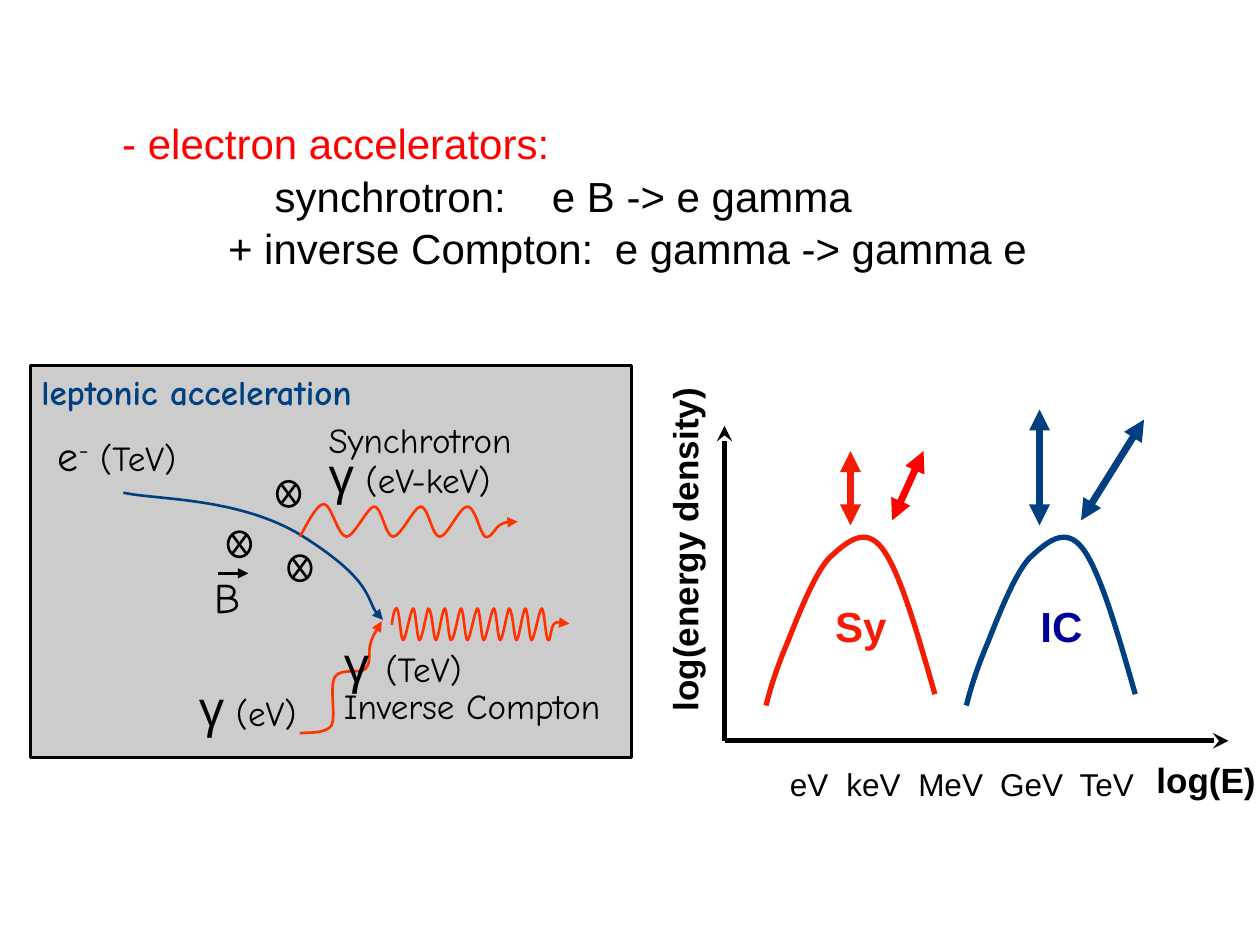
from dataclasses import dataclass
from typing import NamedTuple

from lxml import etree
from pptx import Presentation
from pptx.dml.color import RGBColor
from pptx.enum.shapes import MSO_CONNECTOR, MSO_SHAPE
from pptx.enum.text import MSO_ANCHOR, MSO_AUTO_SIZE, PP_ALIGN
from pptx.oxml.ns import qn
from pptx.util import Pt

PX = 9144  # 100 px to the inch
BLACK = RGBColor(0x00, 0x00, 0x00)
RED = RGBColor(0xFF, 0x00, 0x00)
FLAME = RGBColor(0xF4, 0x1C, 0x05)
ORANGE = RGBColor(0xFF, 0x33, 0x00)
BLUE = RGBColor(0x00, 0x40, 0x80)
NAVY = RGBColor(0x00, 0x00, 0x99)
ARIAL, COMIC = "Arial", "Comic Neue"
STRAIGHT = MSO_CONNECTOR.STRAIGHT
RECT, OVAL = MSO_SHAPE.RECTANGLE, MSO_SHAPE.OVAL
TOP, MIDDLE = MSO_ANCHOR.TOP, MSO_ANCHOR.MIDDLE
LEFT = PP_ALIGN.LEFT
GROW, FIXED = MSO_AUTO_SIZE.SHAPE_TO_FIT_TEXT, MSO_AUTO_SIZE.NONE


class Bit(NamedTuple):
    text: str
    size: int = 20
    raised: bool = False


@dataclass
class Label:
    box: tuple
    lines: list
    font: str = ARIAL
    color: RGBColor = BLACK
    bold: bool = False
    anchor: MSO_ANCHOR = TOP
    turn: int = 0
    gaps: tuple = ()
    tabs: tuple = ()


@dataclass
class Arrow:
    start: tuple
    end: tuple
    color: RGBColor = BLACK
    width: float = 1.5
    head: str = ""
    tail: str = ""


def write(para, text: str, *, size=20, font=ARIAL, color=BLACK, bold=False, raised=False):
    run = para.add_run()
    run.text = text
    run.font.size, run.font.name, run.font.bold = Pt(size), font, bold
    run.font.color.rgb = color
    if raised:
        run._r.get_or_add_rPr().set("baseline", "30000")


def set_tabs(para, stops: tuple):
    tabs = etree.SubElement(para._p.get_or_add_pPr(), qn("a:tabLst"))
    for stop in stops:
        etree.SubElement(tabs, qn("a:tab"), pos=str(stop * PX), algn="l")


def set_line(shape, color: RGBColor, width: float, head="", tail=""):
    shape.line.color.rgb = color
    shape.line.width = Pt(width)
    ln = shape._element.spPr.find(qn("a:ln"))
    for tag, kind in (("a:headEnd", head), ("a:tailEnd", tail)):
        if kind:
            etree.SubElement(ln, qn(tag), type=kind)


def add_label(shapes, label: Label):
    box = shapes.add_textbox(*(n * PX for n in label.box))
    box.rotation = label.turn
    frame = box.text_frame
    frame.word_wrap = bool(label.tabs)
    frame.auto_size, frame.vertical_anchor = GROW, label.anchor
    for i, bits in enumerate(label.lines):
        para = frame.add_paragraph() if i else frame.paragraphs[0]
        if label.gaps:
            para.line_spacing = label.gaps[i]
        if label.tabs:
            set_tabs(para, label.tabs)
        for bit in bits:
            write(para, bit.text, size=bit.size, raised=bit.raised,
                  font=label.font, color=label.color, bold=label.bold)


def add_arrow(shapes, arrow: Arrow):
    line = shapes.add_connector(STRAIGHT, *(n * PX for n in arrow.start + arrow.end))
    set_line(line, arrow.color, arrow.width, arrow.head, arrow.tail)
    etree.SubElement(line._element.spPr, qn("a:effectLst"))


def add_shape(shapes, kind, box: tuple):
    shape = shapes.add_shape(kind, *(n * PX for n in box))
    shape.shadow.inherit = False
    shape.fill.background()
    set_line(shape, BLACK, 1.5)
    return shape


def add_curve(shapes, points: list, color: RGBColor, width=1.5, tail="triangle"):
    """Draw cubic curves: a start point, then three points for each curve."""
    pen = shapes.build_freeform(*points[0], scale=PX)
    pen.add_line_segments(points[1:], close=False)
    shape = pen.convert_to_shape()
    outline = shape._element.find(".//" + qn("a:path"))
    steps = outline.findall(qn("a:lnTo"))
    for i in range(0, len(steps), 3):
        cubic = etree.SubElement(outline, qn("a:cubicBezTo"))
        for step in steps[i:i + 3]:
            cubic.append(step[0])
            outline.remove(step)
    shape.shadow.inherit = False
    shape.fill.background()
    set_line(shape, color, width, tail=tail)


def wave(left: int, pitch: float, count: int, low: int, high: int) -> list:
    """Points of equal waves, each from trough to crest to trough."""
    shares = zip((0.17, 0.45, 0.6, 0.77, 0.84, 1), (low, high, high, high, low, low))
    cycle = list(shares)
    return [(round(left + pitch * (k + share)), y) for k in range(count) for share, y in cycle]


def add_field(shapes, x: int, y: int):
    """Field pointing into the page: a crossed circle."""
    add_arrow(shapes, Arrow((x - 6, y + 8), (x + 6, y - 8)))
    add_shape(shapes, OVAL, (x - 9, y - 10, 18, 20))
    add_arrow(shapes, Arrow((x + 6, y + 8), (x - 6, y - 8)))


HUMP = [(608, 560), (612, 544), (617, 529), (625, 510), (633, 490), (646, 456), (658, 443),
        (671, 431), (686, 417), (700, 435), (714, 453), (728, 502), (742, 551)]
ELECTRON = [(98, 391), (123, 397), (193, 394), (244, 428), (295, 461), (291, 482), (304, 492)]
SOFT = [(238, 582), (242, 581), (258, 583), (263, 576), (267, 568), (261, 545), (266, 537),
        (271, 530), (286, 535), (290, 531), (295, 526), (292, 517), (294, 511),
        (296, 504), (301, 497), (303, 493)]
SYNC = [(238, 426), (241, 421), (251, 400), (257, 400), (263, 400), (268, 425), (275, 426),
        *wave(275, 37, 2, 426, 402), (355, 426), (365, 402), (371, 402),
        (377, 402), (381, 423), (385, 426), (390, 428), (393, 418), (398, 416),
        (402, 414), (408, 414), (411, 414)]
COIL = [(311, 496), (311, 494), (313, 481), (315, 483), (317, 484), (318, 508), (320, 508),
        *wave(320, 12.8, 8, 508, 483), (424, 508), (428, 483), (430, 483),
        (432, 483), (433, 506), (435, 508), (437, 510), (437, 497), (440, 495),
        (443, 493), (450, 495), (452, 495)]
HEADING = [("- electron accelerators:", 9, 0, RED),
           ("synchrotron:\te B -> e gamma", 130, 330, BLACK),
           ("+ inverse Compton:\te gamma -> gamma e", 93, 400, BLACK)]
BOTH = {"width": 4, "head": "triangle", "tail": "triangle"}
ARROWS = [Arrow((575, 338), (575, 588), width=3, head="stealth"),
          Arrow((575, 588), (975, 588), width=3, tail="stealth"),
          Arrow((675, 417), (675, 358), FLAME, **BOTH),
          Arrow((825, 417), (825, 325), BLUE, **BOTH),
          Arrow((708, 413), (733, 358), RED, **BOTH),
          Arrow((858, 413), (908, 333), BLUE, **BOTH)]
PLOT = [Label((908, 597, 100, 44), [[Bit("log(E)")]], bold=True),
        Label((404, 413, 279, 44), [[Bit("log(energy density)")]], bold=True, turn=270),
        Label((617, 602, 296, 40), [[Bit("eV\tkeV\tMeV\tGeV\tTeV", 18)]], tabs=(45, 102, 167, 230)),
        Label((653, 472, 61, 51), [[Bit("Sy", 24)]], color=FLAME, bold=True),
        Label((816, 472, 54, 51), [[Bit("IC", 24)]], color=NAVY, bold=True)]
NOTES = [Label((36, 327, 131, 67), [[Bit("e", 24), Bit("-", 24, True), Bit(" (TeV)")]], COMIC, anchor=MIDDLE),
         Label((251, 322, 187, 93), [[Bit("Synchrotron")], [Bit("γ", 28), Bit(" (eV-keV)")]],
               COMIC, anchor=MIDDLE, gaps=(0.8, 0.7)),
         Label((263, 494, 245, 100), [[Bit("γ ", 28), Bit("(TeV)")], [Bit("Inverse Compton")]],
               COMIC, anchor=MIDDLE, gaps=(0.8, 0.8)),
         Label((148, 523, 100, 76), [[Bit("γ", 28), Bit(" (eV)")]], COMIC, anchor=MIDDLE),
         Label((160, 440, 42, 67), [[Bit("B", 24)]], COMIC, anchor=MIDDLE),
         Label((23, 289, 303, 49), [[Bit("leptonic acceleration")]], COMIC, BLUE, True, MIDDLE, gaps=(0.8,))]


def main():
    deck = Presentation()
    deck.slide_width, deck.slide_height = 1000 * PX, 750 * PX
    shapes = deck.slides.add_slide(deck.slide_layouts[5]).shapes

    # Heading
    title = shapes.title
    title.left, title.top, title.width, title.height = (n * PX for n in (78, 86, 852, 131))
    frame = title.text_frame
    frame.word_wrap, frame.auto_size, frame.vertical_anchor = True, FIXED, TOP
    for i, (text, indent, stop, color) in enumerate(HEADING):
        para = frame.add_paragraph() if i else frame.paragraphs[0]
        para.alignment, para.line_spacing = LEFT, 1.05
        props = para._p.get_or_add_pPr()
        props.set("marL", "0")
        props.set("indent", str(indent * PX))
        if stop:
            set_tabs(para, (stop,))
        write(para, text, size=24, color=color)

    # Energy plot: two humps, axes and shifts
    for shift, color in ((0, FLAME), (159, BLUE)):
        add_curve(shapes, [(x + shift, y) for x, y in HUMP], color, 3, tail="")
    for label in PLOT:
        add_label(shapes, label)
    for arrow in ARROWS:
        add_arrow(shapes, arrow)

    # Leptonic panel
    panel = add_shape(shapes, RECT, (24, 290, 477, 311))
    panel.fill.solid()
    panel.fill.fore_color.rgb = BLACK
    tint = panel._element.spPr.find(qn("a:solidFill"))[0]
    etree.SubElement(tint, qn("a:alpha"), val="20000")
    add_curve(shapes, ELECTRON, BLUE)
    for points in (SYNC, SOFT, COIL):
        add_curve(shapes, points, ORANGE)
    for x, y in ((190, 432), (238, 451), (229, 392)):
        add_field(shapes, x, y)
    for label in NOTES:
        add_label(shapes, label)
    add_arrow(shapes, Arrow((173, 455), (197, 455), tail="triangle"))

    deck.save("out.pptx")


if __name__ == "__main__":
    main()
